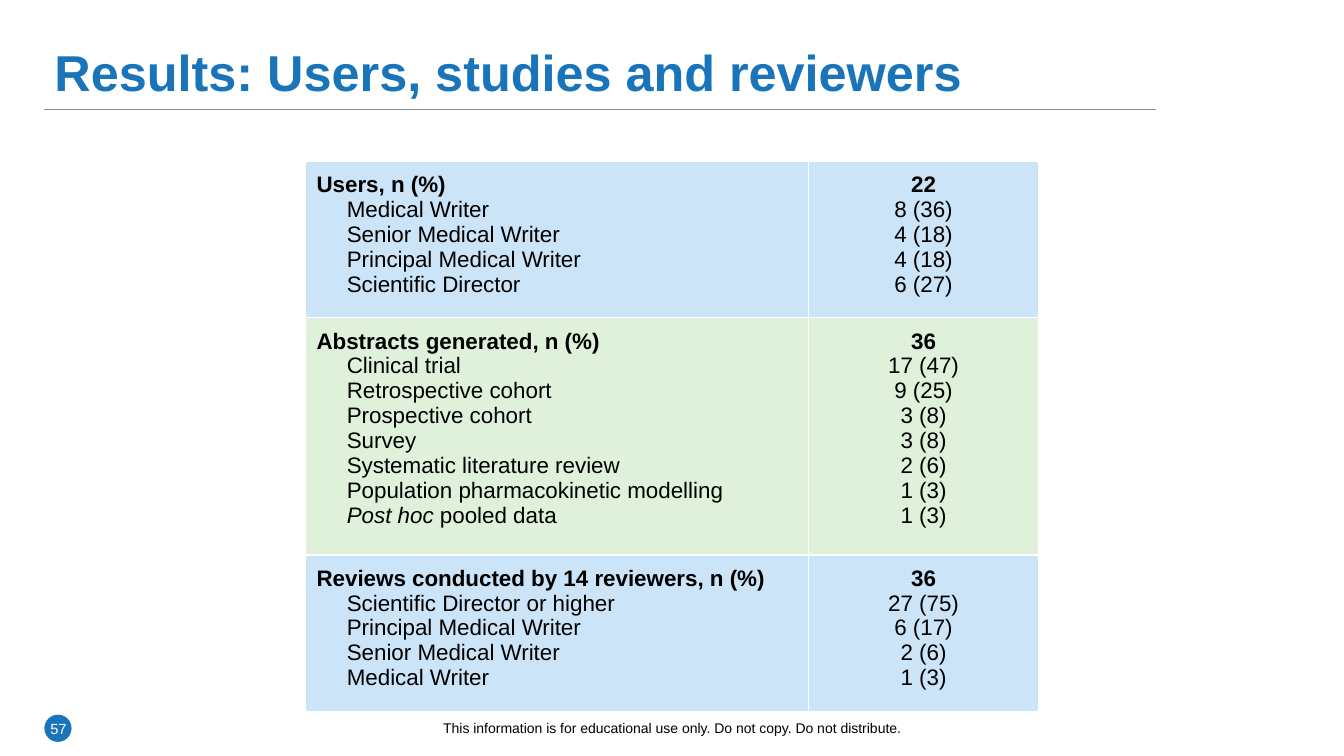
from lxml import etree
from pptx import Presentation
from pptx.dml.color import RGBColor as RGB
from pptx.enum.shapes import MSO_CONNECTOR as LINK, MSO_SHAPE as SHAPE
from pptx.enum.text import MSO_ANCHOR as ANCHOR, PP_ALIGN as ALIGN
from pptx.oxml import parse_xml
from pptx.oxml.ns import nsdecls, qn
from pptx.util import Inches, Pt

HUES = {"blue": "1A74BA", "rule": "8C8C8C", "black": "000000",
        "white": "FFFFFF", "sky": "CBE4F8", "mint": "DFF1DA"}

GROUPS = [
    ("sky", 1.45, [
        ("Users, n (%)", "22"),
        ("Medical Writer", "8 (36)"),
        ("Senior Medical Writer", "4 (18)"),
        ("Principal Medical Writer", "4 (18)"),
        ("Scientific Director", "6 (27)"),
    ]),
    ("mint", 2.2, [
        ("Abstracts generated, n (%)", "36"),
        ("Clinical trial", "17 (47)"),
        ("Retrospective cohort", "9 (25)"),
        ("Prospective cohort", "3 (8)"),
        ("Survey", "3 (8)"),
        ("Systematic literature review", "2 (6)"),
        ("Population pharmacokinetic modelling", "1 (3)"),
        ("*Post hoc* pooled data", "1 (3)"),
    ]),
    ("sky", 1.45, [
        ("Reviews conducted by 14 reviewers, n (%)", "36"),
        ("Scientific Director or higher", "27 (75)"),
        ("Principal Medical Writer", "6 (17)"),
        ("Senior Medical Writer", "2 (6)"),
        ("Medical Writer", "1 (3)"),
    ]),
]


class Page:
    def __init__(self, deck):
        self.slide = deck.slides.add_slide(deck.slide_layouts[5])
        self.shapes = self.slide.shapes
        self.font = "Arial"

    def hue(self, name):
        return RGB.from_string(HUES[name])

    def runs(self, para, text, size, hue="black", bold=False):
        for i, part in enumerate(text.split("*")):
            if part:
                run = para.add_run()
                run.text = part
                font = run.font
                font.name, font.size = self.font, Pt(size)
                font.bold, font.italic = bold, i % 2 == 1
                font.color.rgb = self.hue(hue)

    def title(self, text, *box):
        head = self.shapes.title
        head.left, head.top, head.width, head.height = map(Inches, box)
        frame = head.text_frame
        frame.vertical_anchor = ANCHOR.MIDDLE
        para = frame.paragraphs[0]
        para.alignment, para.line_spacing = ALIGN.LEFT, 0.9
        self.runs(para, text, 36, "blue", True)

    def rule(self, x, y, end):
        line = self.shapes.add_connector(
            LINK.STRAIGHT, Inches(x), Inches(y), Inches(end), Inches(y))
        line.line.color.rgb = self.hue("rule")
        line.line.width = Pt(0.5)
        etree.SubElement(line._element.spPr, qn("a:effectLst"))

    def disc(self, x, y, size):
        dot = self.shapes.add_shape(
            SHAPE.OVAL, Inches(x), Inches(y), Inches(size), Inches(size))
        dot.shadow.inherit = False
        dot.fill.solid()
        dot.fill.fore_color.rgb = self.hue("blue")
        dot.line.fill.background()

    def label(self, text, size, hue, *box):
        frame = self.shapes.add_textbox(*map(Inches, box)).text_frame
        frame.word_wrap = True
        para = frame.paragraphs[0]
        para.alignment = ALIGN.CENTER
        self.runs(para, text, size, hue)

    def cell(self, cell, lines, fill, center):
        cell.margin_left = cell.margin_right = Inches(0.11)
        cell.margin_top = cell.margin_bottom = Inches(0.11)
        props = cell._tc.get_or_add_tcPr()
        for side in "LRTB":
            props.append(parse_xml(
                f'<a:ln{side} {nsdecls("a")} w="{Pt(1)}"><a:solidFill>'
                f'<a:srgbClr val="{HUES["white"]}"/></a:solidFill></a:ln{side}>'))
        cell.fill.solid()
        cell.fill.fore_color.rgb = self.hue(fill)
        frame = cell.text_frame
        for i, text in enumerate(lines):
            para = frame.add_paragraph() if i else frame.paragraphs[0]
            if center:
                para.alignment = ALIGN.CENTER
            elif i:
                para.level = 1
                props = para._p.get_or_add_pPr()
                props.set("marL", str(Inches(0.3)))
                props.set("indent", "0")
            self.runs(para, text, 16, bold=i == 0)

    def table(self, groups, x, y, widths):
        high = sum(tall for _, tall, _ in groups)
        grid = self.shapes.add_table(
            len(groups), len(widths), Inches(x), Inches(y),
            Inches(sum(widths)), Inches(high)).table
        grid.first_row = grid.horz_banding = False
        for col, wide in zip(grid.columns, widths):
            col.width = Inches(wide)
        for row, (fill, tall, pairs) in zip(grid.rows, groups):
            row.height = Inches(tall)
            for i, lines in enumerate(zip(*pairs)):
                self.cell(row.cells[i], lines, fill, i == 1)


def main():
    deck = Presentation()
    deck.slide_width, deck.slide_height = Inches(13.33), Inches(7.5)
    page = Page(deck)
    page.disc(0.44, 7.09, 0.27)
    page.rule(0.44, 1.09, 11.47)
    page.title("Results: Users, studies and reviewers", 0.44, 0.21, 12.17, 1.07)
    page.label("57", 10.5, "white", 0.29, 7.09, 0.58, 0.4)
    page.table(GROUPS, 3.03, 1.6, [4.99, 2.28])
    page.label("This information is for educational use only. "
               "Do not copy. Do not distribute.", 10, "black", 0, 7.09, 13.33, 0.4)
    deck.save("out.pptx")


if __name__ == "__main__":
    main()
